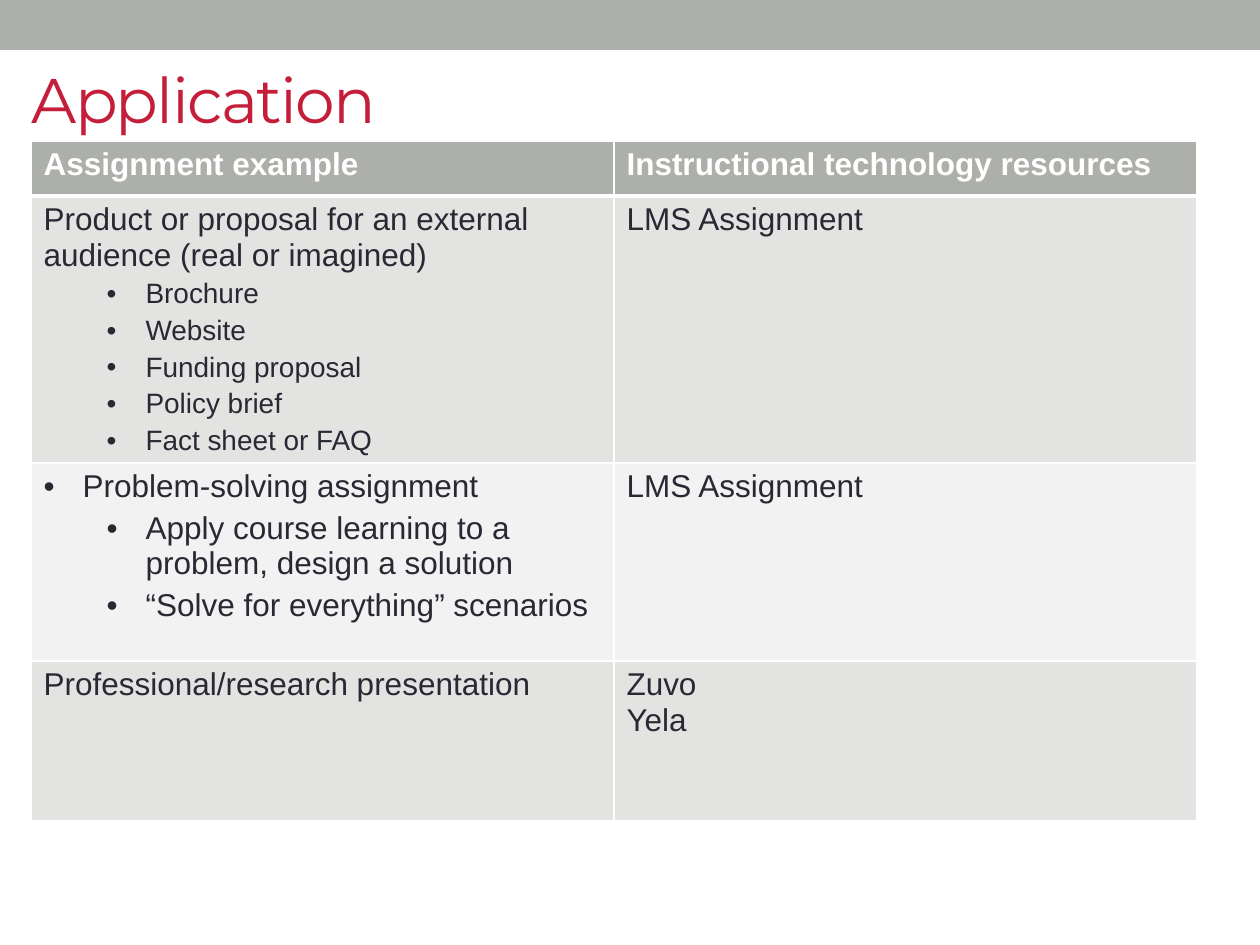
from dataclasses import dataclass
from typing import Any

from lxml.etree import SubElement
from pptx import Presentation
from pptx.dml.color import RGBColor
from pptx.enum.shapes import MSO_SHAPE
from pptx.enum.text import MSO_ANCHOR, MSO_AUTO_SIZE, PP_ALIGN
from pptx.oxml import parse_xml
from pptx.oxml.ns import nsdecls, qn
from pptx.util import Emu, Pt

EMU_PER_PX = 914400 / 126


@dataclass(frozen=True)
class Theme:
    gray: str = "ADAFAA"
    red: str = "C41E3A"
    ink: str = "292934"
    white: str = "FFFFFF"
    dark_band: str = "E3E3E2"
    light_band: str = "F1F2F1"
    title_font: str = "Montserrat"
    body_font: str = "Arial"
    title_size: int = 36
    body_size: int = 18
    small_size: int = 16
    thin_border: int = 1
    thick_border: int = 3


THEME = Theme()


@dataclass(frozen=True)
class Line:
    text: str
    bullet_indent: int = 0
    size: int = THEME.body_size


@dataclass(frozen=True)
class Row:
    height: int
    fill: str
    cells: tuple[list[Line], list[Line]]
    header: bool = False


HANGING_INDENT = 39
SUB_INDENT = 102
COLUMN_WIDTH = 583

DELIVERABLES = ["Brochure", "Website", "Funding proposal", "Policy brief", "Fact sheet or FAQ"]
SCENARIOS = [
    "Apply course learning to a problem, design a solution",
    "“Solve for everything” scenarios",
]
ROWS = [
    Row(55, THEME.gray,
        ([Line("Assignment example")], [Line("Instructional technology resources")]),
        header=True),
    Row(267, THEME.dark_band,
        ([Line("Product or proposal for an external audience (real or imagined)")]
         + [Line(text, SUB_INDENT, THEME.small_size) for text in DELIVERABLES],
         [Line("LMS Assignment")])),
    Row(198, THEME.light_band,
        ([Line("Problem-solving assignment", HANGING_INDENT)]
         + [Line(text, SUB_INDENT) for text in SCENARIOS],
         [Line("LMS Assignment")])),
    Row(160, THEME.dark_band,
        ([Line("Professional/research presentation")], [Line("Zuvo"), Line("Yela")])),
]


def px(value: int) -> Emu:
    return Emu(round(value * EMU_PER_PX))


def apply_format(target: Any, values: dict[str, Any]) -> None:
    for name, value in values.items():
        setattr(target, name, value)


def format_font(font: Any, name: str, size: int, color: str, bold: bool = False) -> None:
    apply_format(font, {"name": name, "size": Pt(size), "bold": bold})
    font.color.rgb = RGBColor.from_string(color)


def fill_solid(target: Any, color: str) -> None:
    target.fill.solid()
    target.fill.fore_color.rgb = RGBColor.from_string(color)


def add_top_bar(slide: Any) -> None:
    shape = slide.shapes.add_shape(MSO_SHAPE.RECTANGLE, 0, 0, px(1260), px(50))
    shape.shadow.inherit = False
    fill_solid(shape, THEME.gray)
    shape.line.fill.background()


def write_title(slide: Any, text: str) -> None:
    title = slide.shapes.title
    apply_format(title, {"left": px(19), "top": px(57), "width": px(1134), "height": px(83)})
    apply_format(title.text_frame, {
        "text": text,
        "word_wrap": True,
        "auto_size": MSO_AUTO_SIZE.NONE,
        "vertical_anchor": MSO_ANCHOR.MIDDLE,
    })
    paragraph = title.text_frame.paragraphs[0]
    paragraph.alignment = PP_ALIGN.LEFT
    font = paragraph.runs[0].font
    format_font(font, THEME.title_font, THEME.title_size, THEME.red)
    paragraph.runs[0]._r.get_or_add_rPr().set("spc", "-100")


def add_bullet(paragraph: Any, line: Line) -> None:
    paragraph.space_before = Pt(line.size * 0.2)
    paragraph.level = int(line.bullet_indent == SUB_INDENT)
    properties = paragraph._p.get_or_add_pPr()
    properties.set("marL", str(px(line.bullet_indent)))
    properties.set("indent", str(-px(HANGING_INDENT)))
    SubElement(properties, qn("a:buFont"), typeface=THEME.body_font)
    SubElement(properties, qn("a:buChar"), char="•")


def set_borders(cell: Any, widths: dict[str, int]) -> None:
    properties = cell._tc.get_or_add_tcPr()
    for position, (side, width) in enumerate(widths.items()):
        border = parse_xml(
            f'<a:{side} {nsdecls("a")} w="{Pt(width)}"><a:solidFill>'
            f'<a:srgbClr val="{THEME.white}"/></a:solidFill></a:{side}>'
        )
        properties.insert(position, border)


def write_cell(cell: Any, lines: list[Line], row: Row) -> None:
    frame = cell.text_frame
    for index, line in enumerate(lines):
        paragraph = frame.add_paragraph() if index else frame.paragraphs[0]
        run = paragraph.add_run()
        run.text = line.text
        color = THEME.white if row.header else THEME.ink
        format_font(run.font, THEME.body_font, line.size, color, row.header)
        if line.bullet_indent:
            add_bullet(paragraph, line)
    fill_solid(cell, row.fill)


def add_assignment_table(slide: Any, rows: list[Row]) -> None:
    height = sum(row.height for row in rows)
    table = slide.shapes.add_table(
        len(rows), 2, px(31), px(141), px(2 * COLUMN_WIDTH), px(height)
    ).table
    for column in table.columns:
        column.width = px(COLUMN_WIDTH)
    for row_index, row in enumerate(rows):
        table.rows[row_index].height = px(row.height)
        below_header = row_index > 0 and rows[row_index - 1].header
        widths = {
            "lnL": THEME.thin_border,
            "lnR": THEME.thin_border,
            "lnT": THEME.thick_border if below_header else THEME.thin_border,
            "lnB": THEME.thick_border if row.header else THEME.thin_border,
        }
        for column_index, lines in enumerate(row.cells):
            cell = table.cell(row_index, column_index)
            write_cell(cell, lines, row)
            set_borders(cell, widths)


def main() -> None:
    presentation = Presentation()
    apply_format(presentation, {"slide_width": px(1260), "slide_height": px(945)})
    slide = presentation.slides.add_slide(presentation.slide_layouts[5])
    add_top_bar(slide)
    write_title(slide, "Application")
    add_assignment_table(slide, ROWS)
    presentation.save("out.pptx")


if __name__ == "__main__":
    main()
